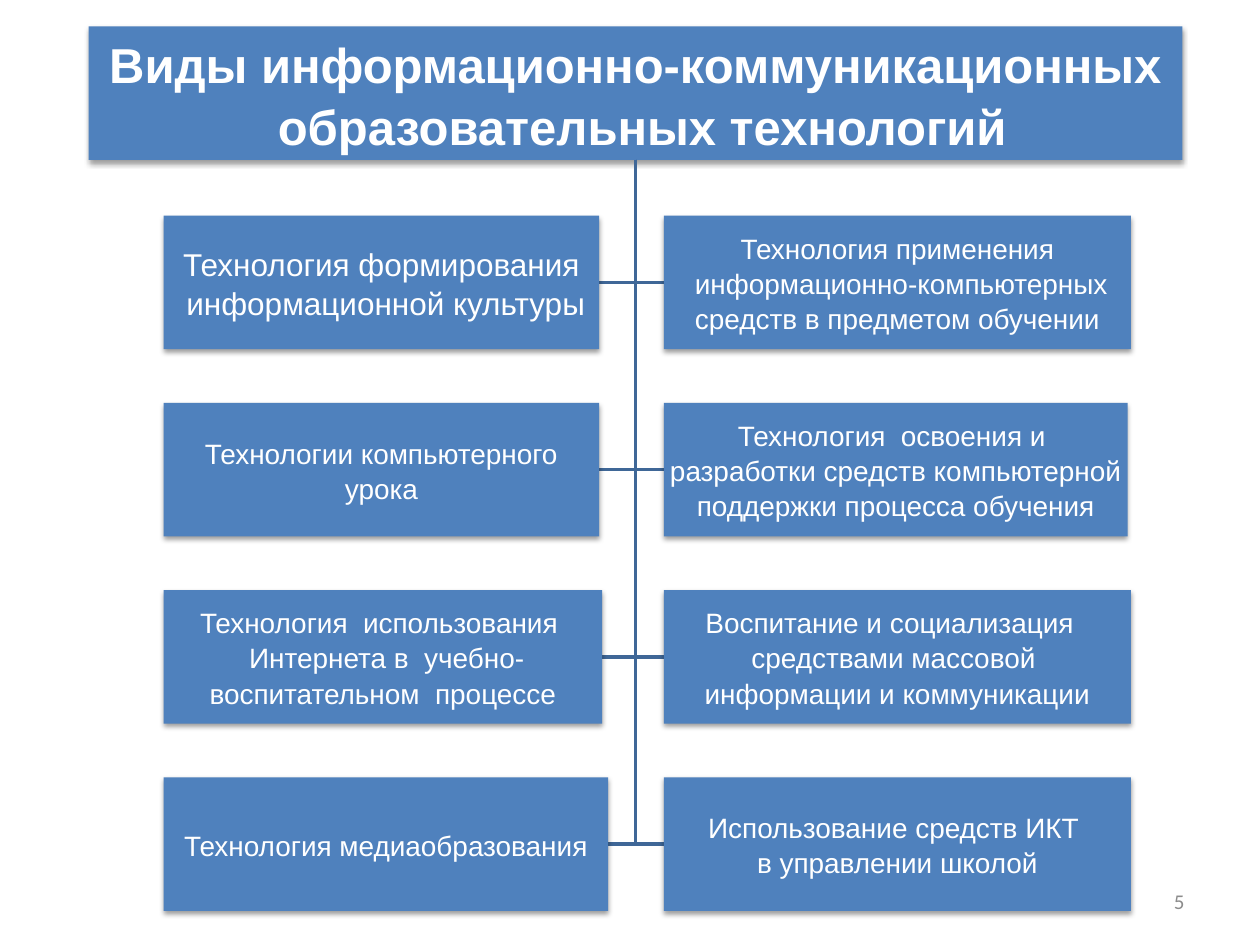
from dataclasses import dataclass

from lxml import etree
from pptx import Presentation
from pptx.dml.color import RGBColor
from pptx.enum import shapes, text
from pptx.oxml import ns
from pptx.util import Pt


@dataclass(frozen=True)
class Theme:
    box: RGBColor = RGBColor(0x4F, 0x81, 0xBD)
    branch: RGBColor = RGBColor(0x3F, 0x67, 0x97)
    light: RGBColor = RGBColor(0xFF, 0xFF, 0xFF)
    muted: RGBColor = RGBColor(0x8C, 0x8C, 0x8C)
    font: str = "Arial"
    number_font: str = "Calibri"
    title_size: int = 28
    lead_size: int = 18
    topic_size: int = 16
    number_size: int = 12


THEME = Theme()

TITLE = "Виды информационно-коммуникационных\n образовательных технологий"
# Each row: left topic, left width, right topic, right width
TOPIC_ROWS = [
    ("Технология формирования\n информационной культуры", 249,
     "Технология применения\n информационно-компьютерных\n"
     "средств в предметом обучении", 267),
    ("Технологии компьютерного урока", 249,
     "Технология  освоения и \nразработки средств компьютерной\n"
     "поддержки процесса обучения", 265),
    ("Технология  использования \n Интернета в  учебно-\n"
     "воспитательном  процессе", 250.6,
     "Воспитание и социализация  \nсредствами массовой \n"
     "информации и коммуникации", 267),
    ("Технология медиаобразования", 254,
     "Использование средств ИКТ \nв управлении школой", 267),
]

BOX_HEIGHT = 76.3
TITLE_LEFT, TITLE_TOP, TITLE_WIDTH = 50.6, 15.1, 625
TITLE_BOTTOM = TITLE_TOP + BOX_HEIGHT
TRUNK_X = TITLE_LEFT + TITLE_WIDTH / 2
LEFT_X, RIGHT_X = 93.5, 379.3
FIRST_ROW_TOP, ROW_PITCH = 123.3, 107


def write(frame, content, size, font, color, align, bold=False):
    frame.text = content
    frame.word_wrap = True
    frame.auto_size = text.MSO_AUTO_SIZE.NONE
    frame.vertical_anchor = text.MSO_ANCHOR.MIDDLE
    for paragraph in frame.paragraphs:
        paragraph.alignment = align
        for run in paragraph.runs:
            run.font.size = Pt(size)
            run.font.name = font
            run.font.bold = bold
            run.font.color.rgb = color


def add_soft_shadow(shape):
    """Give the shape a small shadow falling straight down."""
    shape.shadow.inherit = False
    effects = shape._element.spPr.find(ns.qn("a:effectLst"))
    shadow = etree.SubElement(
        effects, ns.qn("a:outerShdw"), blurRad=str(Pt(3.1)),
        dist=str(Pt(1.6)), dir="5400000", rotWithShape="0")
    color = etree.SubElement(shadow, ns.qn("a:srgbClr"), val="000000")
    etree.SubElement(color, ns.qn("a:alpha"), val="38000")


def style_box(box, content, size, inset, bold=False):
    box.fill.solid()
    box.fill.fore_color.rgb = THEME.box
    box.line.fill.background()
    add_soft_shadow(box)
    frame = box.text_frame
    write(frame, content, size, THEME.font, THEME.light,
          text.PP_ALIGN.CENTER, bold)
    frame.margin_left = frame.margin_right = Pt(inset)
    frame.margin_top = frame.margin_bottom = Pt(inset)
    for paragraph in frame.paragraphs:
        paragraph.line_spacing = 1.05


def place_title(slide):
    title = slide.shapes.title
    title.left, title.top = Pt(TITLE_LEFT), Pt(TITLE_TOP)
    title.width, title.height = Pt(TITLE_WIDTH), Pt(BOX_HEIGHT)
    style_box(title, TITLE, THEME.title_size, 1.4, bold=True)


def add_branch(slide, end_x, end_y):
    """Draw the line down the trunk and out to the edge of a topic."""
    builder = slide.shapes.build_freeform(Pt(TRUNK_X), Pt(TITLE_BOTTOM))
    builder.add_line_segments(
        [(Pt(TRUNK_X), Pt(end_y)), (Pt(end_x), Pt(end_y))], close=False)
    branch = builder.convert_to_shape()
    branch.fill.background()
    branch.line.color.rgb = THEME.branch
    branch.line.width = Pt(2)
    branch.shadow.inherit = False


def add_topic(slide, left, top, width, content, size):
    topic = slide.shapes.add_shape(
        shapes.MSO_SHAPE.RECTANGLE,
        Pt(left), Pt(top), Pt(width), Pt(BOX_HEIGHT))
    style_box(topic, content, size, 0.7)


def add_slide_number(slide, number):
    box = slide.shapes.add_textbox(Pt(516), Pt(500.5), Pt(168), Pt(28.8))
    write(box.text_frame, number, THEME.number_size, THEME.number_font,
          THEME.muted, text.PP_ALIGN.RIGHT)


def main():
    deck = Presentation()
    deck.slide_width, deck.slide_height = Pt(720), Pt(540)
    slide = deck.slides.add_slide(deck.slide_layouts.get_by_name("Title Only"))
    place_title(slide)
    add_slide_number(slide, "5")
    for row, (left_topic, left_width, right_topic, right_width) in enumerate(TOPIC_ROWS):
        top = FIRST_ROW_TOP + row * ROW_PITCH
        middle = top + BOX_HEIGHT / 2
        add_branch(slide, LEFT_X + left_width, middle)
        add_branch(slide, RIGHT_X, middle)
        left_size = THEME.lead_size if row == 0 else THEME.topic_size
        add_topic(slide, LEFT_X, top, left_width, left_topic, left_size)
        add_topic(slide, RIGHT_X, top, right_width, right_topic, THEME.topic_size)
    deck.save("out.pptx")


if __name__ == "__main__":
    main()
